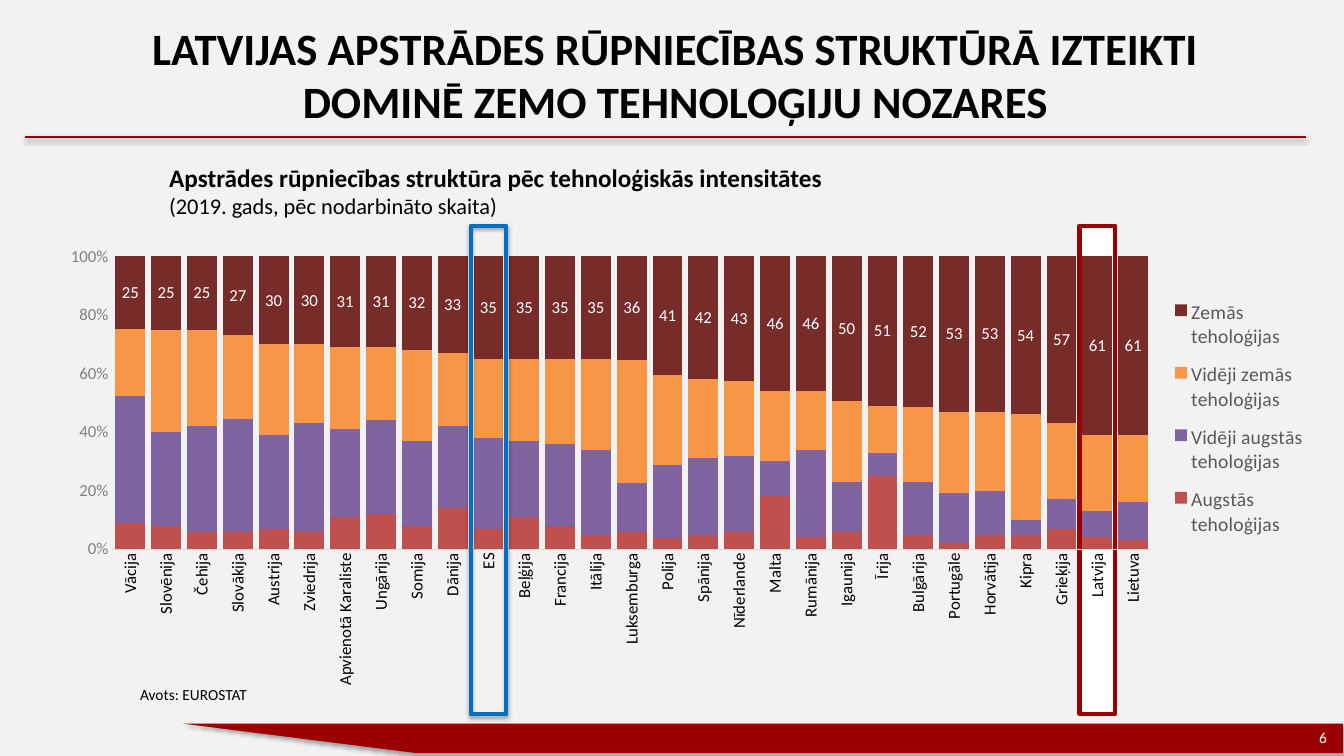
from lxml.etree import SubElement
from pptx import Presentation
from pptx.chart.data import CategoryChartData
from pptx.dml.color import RGBColor
from pptx.enum.chart import XL_CHART_TYPE, XL_LEGEND_POSITION, XL_TICK_MARK
from pptx.enum.shapes import MSO_CONNECTOR, MSO_SHAPE
from pptx.enum.text import MSO_ANCHOR, PP_ALIGN
from pptx.oxml import parse_xml
from pptx.oxml.ns import nsdecls, qn
from pptx.util import Inches, Pt

FONT = "Calibri"
DARK_RED = "9A0000"
CHART_BOX = (0.46, 2.37, 12.61, 4.95)
PLOT = (0.052, 0.035, 0.817, 0.587)
LEGEND = (0.877, 0.095, 0.122, 0.53)

COUNTRIES = [
    "Vācija", "Slovēnija", "Čehija", "Slovākija", "Austrija", "Zviedrija",
    "Apvienotā Karaliste", "Ungārija", "Somija", "Dānija", "ES", "Beļģija",
    "Francija", "Itālija", "Luksemburga", "Polija", "Spānija", "Nīderlande",
    "Malta", "Rumānija", "Igaunija", "Īrija", "Bulgārija", "Portugāle",
    "Horvātija", "Kipra", "Grieķija", "Latvija", "Lietuva"]
SERIES = [
    ("Augstās teholoģijas", "C0504D",
     [9, 8, 6, 6, 7, 6, 11, 12, 8, 14, 7, 11, 8, 5, 6, 4, 5, 6, 18, 4, 6, 25,
      5, 2, 5, 5, 7, 4, 3]),
    ("Vidēji augstās teholoģijas", "8064A2",
     [44, 32, 36, 39, 32, 37, 30, 32, 29, 28, 31, 26, 28, 29, 17, 25, 26, 26,
      12, 30, 17, 8, 18, 17, 15, 5, 10, 9, 13]),
    ("Vidēji zemās teholoģijas", "F79646",
     [23, 35, 33, 29, 31, 27, 28, 25, 31, 25, 27, 28, 29, 31, 43, 31, 27, 26,
      24, 20, 28, 16, 26, 28, 27, 36, 26, 26, 23]),
    ("Zemās teholoģijas", "772C2A",
     [25, 25, 25, 27, 30, 30, 31, 31, 32, 33, 35, 35, 35, 35, 36, 41, 42, 43,
      46, 46, 50, 51, 52, 53, 53, 54, 57, 61, 61]),
]


def rgb(value):
    return RGBColor.from_string(value)


def inches(box):
    return [Inches(v) for v in box]


def style_font(font, size, color, bold=False):
    font.name, font.size, font.bold = FONT, Pt(size), bold
    font.color.rgb = rgb(color)


def add_text(s, box, lines, size=11, color="000000", bold=False,
             align=PP_ALIGN.LEFT, anchor=MSO_ANCHOR.TOP):
    tf = s.shapes.add_textbox(*inches(box)).text_frame
    tf.word_wrap, tf.vertical_anchor = True, anchor
    p = tf.paragraphs[0]
    p.alignment = align
    for i, line in enumerate([lines] if isinstance(lines, str) else lines):
        text, fmt = (line, {}) if isinstance(line, str) else line
        if i:
            p.add_line_break()
        r = p.add_run()
        r.text = text
        style_font(r.font, fmt.get("size", size), color, fmt.get("bold", bold))


def set_shadow(shape, alpha=None, dist=1.8):
    spPr = shape._element.spPr
    for old in spPr.findall(qn("a:effectLst")):
        spPr.remove(old)
    effects = SubElement(spPr, qn("a:effectLst"))
    if alpha:
        effects.append(parse_xml(
            f'<a:outerShdw {nsdecls("a")} blurRad="{Pt(3.1)}" dist="{Pt(dist)}" '
            f'dir="5400000" rotWithShape="0"><a:srgbClr val="000000">'
            f'<a:alpha val="{alpha * 1000}"/></a:srgbClr></a:outerShdw>'))


def add_block(s, kind, box, fill=None, line=None, shadow=None):
    sp = s.shapes.add_shape(kind, *inches(box))
    sp.shadow.inherit = False
    if fill:
        sp.fill.solid()
        sp.fill.fore_color.rgb = rgb(fill)
    else:
        sp.fill.background()
    if line:
        sp.line.color.rgb, sp.line.width = rgb(line), Pt(3)
    else:
        sp.line.fill.background()
    set_shadow(sp, shadow)
    return sp


def add_header(s, box):
    x, y, w, h = box
    add_text(s, (x + 0.82, y + 0.2, w - 1.44, 1.07),
             "LATVIJAS APSTRĀDES RŪPNIECĪBAS STRUKTŪRĀ IZTEIKTI "
             "DOMINĒ ZEMO TEHNOLOĢIJU NOZARES", size=32, bold=True,
             align=PP_ALIGN.CENTER, anchor=MSO_ANCHOR.MIDDLE)
    rule = s.shapes.add_connector(MSO_CONNECTOR.STRAIGHT,
                                  *inches((x, y + h, x + w, y + h)))
    rule.line.color.rgb, rule.line.width = rgb(DARK_RED), Pt(2)
    set_shadow(rule, 38, 1.6)


def add_footer(s, box):
    x, y, w, h = box
    band = add_block(s, MSO_SHAPE.FLOWCHART_MANUAL_INPUT,
                     (x + (w - h) / 2, y + (h - w) / 2, h, w), DARK_RED, shadow=35)
    band.rotation = 270
    add_text(s, (x + w - 1.19, y + 0.01, 1.13, 0.25), "6", color="FFFFFF",
             align=PP_ALIGN.RIGHT, anchor=MSO_ANCHOR.MIDDLE)


def add_highlight(s, box, country, **style):
    slot = box[2] * PLOT[2] / len(COUNTRIES)
    x = box[0] + box[2] * PLOT[0] + slot * COUNTRIES.index(country)
    add_block(s, MSO_SHAPE.RECTANGLE, (x, box[1] - 0.13, slot, 4.84), **style)


def set_layout(element, box, inner=False):
    for old in element.findall(qn("c:layout")):
        element.remove(old)
    x, y, w, h = box
    target = '<c:layoutTarget val="inner"/>' if inner else ""
    layout = parse_xml(
        f'<c:layout {nsdecls("c")}><c:manualLayout>{target}'
        f'<c:xMode val="edge"/><c:yMode val="edge"/><c:x val="{x}"/>'
        f'<c:y val="{y}"/><c:w val="{w}"/><c:h val="{h}"/>'
        f'</c:manualLayout></c:layout>')
    element.insert(0 if inner else 1, layout)


def add_structure_chart(s, box):
    data = CategoryChartData()
    data.categories = COUNTRIES
    for name, _, values in SERIES:
        data.add_series(name, values)
    chart = s.shapes.add_chart(XL_CHART_TYPE.COLUMN_STACKED_100,
                               *inches(box), data).chart
    style_font(chart.font, 10, "000000")
    chart.has_title = False
    plot = chart.plots[0]
    plot.gap_width, plot.overlap, plot.vary_by_categories = 20, 100, False
    for series, (_, color, _) in zip(plot.series, SERIES):
        series.format.fill.solid()
        series.format.fill.fore_color.rgb = rgb(color)
    labels = plot.series[-1].data_labels
    labels.show_value = True
    labels.number_format, labels.number_format_is_linked = "#,##0", False
    style_font(labels.font, 12, "FFFFFF")

    cat, val = chart.category_axis, chart.value_axis
    for axis, color in ((cat, "000000"), (val, "808080")):
        axis.major_tick_mark = axis.minor_tick_mark = XL_TICK_MARK.NONE
        axis.has_major_gridlines = False
        style_font(axis.tick_labels.font, 12, color)
    cat.format.line.color.rgb, cat.format.line.width = rgb("D9D9D9"), Pt(0.75)
    cat._element.find(qn("c:txPr")).find(qn("a:bodyPr")).set("rot", "-5400000")
    val.format.line.fill.background()
    val.minimum_scale, val.maximum_scale, val.major_unit = 0, 1, 0.2
    val.tick_labels.number_format = "0%"
    val.tick_labels.number_format_is_linked = False

    chart.has_legend = True
    legend = chart.legend
    legend.position, legend.include_in_layout = XL_LEGEND_POSITION.RIGHT, False
    style_font(legend.font, 14, "595959")
    set_layout(legend._element, LEGEND)
    set_layout(chart._chartSpace.chart.plotArea, PLOT, inner=True)


def main():
    prs = Presentation()
    prs.slide_width, prs.slide_height = Inches(13.33), Inches(7.5)
    s = prs.slides.add_slide(prs.slide_layouts[6])
    s.background.fill.solid()
    s.background.fill.fore_color.rgb = rgb("F2F2F2")
    add_header(s, (0.25, 0, 12.7, 1.36))
    add_footer(s, (1.82, 7.18, 11.5, 0.29))
    add_highlight(s, CHART_BOX, "Latvija", fill="FFFFFF", line=DARK_RED)
    add_structure_chart(s, CHART_BOX)
    add_text(s, (1.58, 1.56, 8.33, 0.67), [
        ("Apstrādes rūpniecības struktūra pēc tehnoloģiskās intensitātes",
         {"size": 18, "bold": True}),
        ("(2019. gads, pēc nodarbināto skaita)", {"size": 16})])
    add_text(s, (1.29, 6.75, 3.38, 0.29), "Avots: EUROSTAT")
    add_highlight(s, CHART_BOX, "ES", line="0070C0", shadow=35)
    prs.save("out.pptx")


if __name__ == "__main__":
    main()
